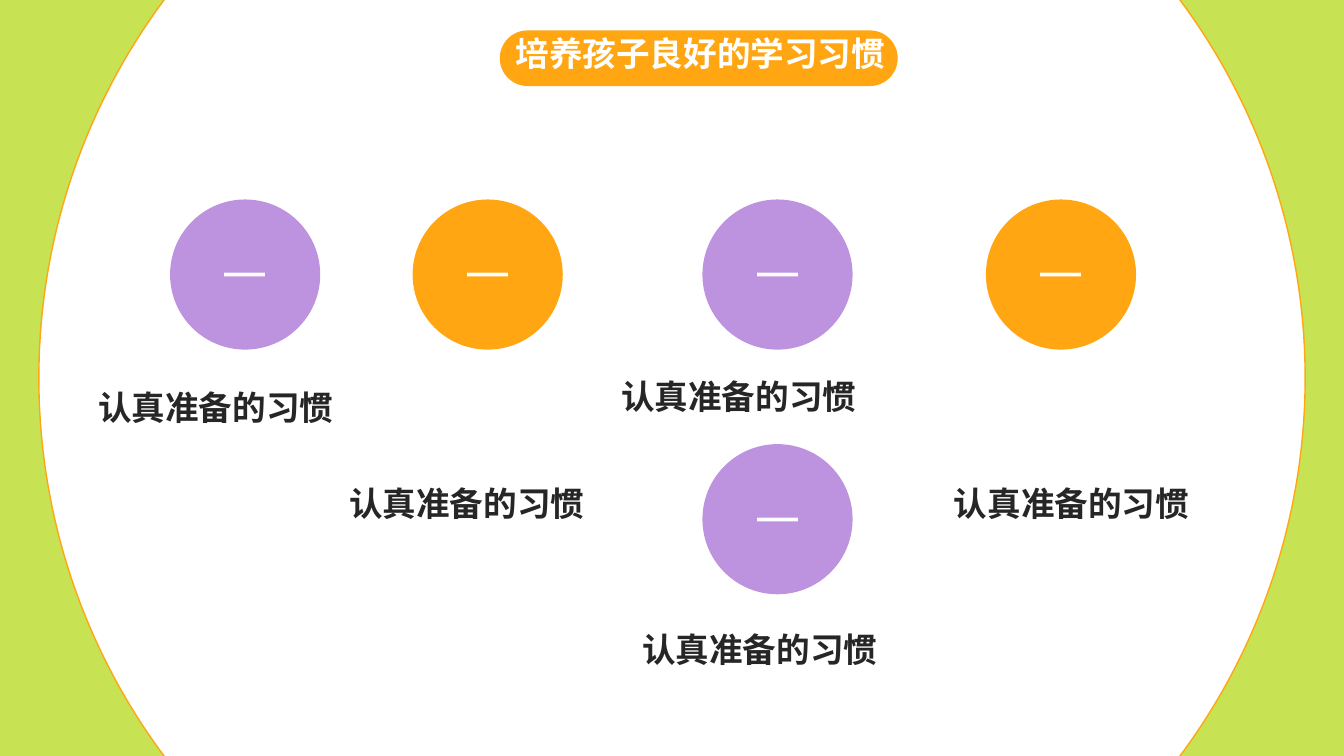
"""Build the slide about good study habits for children."""
from dataclasses import dataclass

from lxml.etree import SubElement
from pptx import Presentation
from pptx.dml.color import RGBColor
from pptx.enum.shapes import MSO_SHAPE
from pptx.enum.text import MSO_ANCHOR, MSO_AUTO_SIZE, PP_ALIGN
from pptx.oxml.ns import qn
from pptx.shapes.autoshape import Shape
from pptx.slide import Slide
from pptx.text.text import TextFrame
from pptx.util import Emu, Pt

EMU_PER_PX = 9525


@dataclass(frozen=True)
class Theme:
    green: str = "C7E252"
    orange: str = "FFA612"
    purple: str = "BD92DF"
    white: str = "FFFFFF"
    ink: str = "262626"
    font: str = "Noto Sans CJK SC"
    number_size: int = 32
    heading_size: int = 24
    outline_width: int = 1


@dataclass(frozen=True)
class Box:
    left: int
    top: int
    width: int
    height: int

    def emu(self) -> tuple[Emu, ...]:
        return tuple(px(n) for n in (self.left, self.top, self.width, self.height))


@dataclass(frozen=True)
class Badge:
    left: int
    top: int
    color: str


@dataclass(frozen=True)
class Label:
    left: int
    top: int


THEME = Theme()
SLIDE = Box(0, 0, 1280, 720)
DISC = Box(37, -243, 1206, 1206)
TITLE_PILL = Box(476, 29, 379, 53)
TITLE_BOX = Box(484, 32, 790, 42)
BADGE_SIZE = 143
LABEL_WIDTH, LABEL_HEIGHT = 317, 48
TITLE = "培养孩子良好的学习习惯"
HABIT = "认真准备的习惯"
NUMBER = "一"
BADGES = (
    Badge(162, 190, THEME.purple),
    Badge(393, 190, THEME.orange),
    Badge(669, 190, THEME.purple),
    Badge(939, 190, THEME.orange),
    Badge(669, 423, THEME.purple),
)
LABELS = (
    Label(84, 364),
    Label(582, 353),
    Label(602, 594),
    Label(899, 455),
    Label(323, 455),
)


def px(count: int) -> Emu:
    return Emu(count * EMU_PER_PX)


def write(frame: TextFrame, text: str, size: int, color: str, bold: bool) -> None:
    frame.text = text
    font = frame.paragraphs[0].runs[0].font
    font.size = Pt(size)
    font.bold = bold
    font.color.rgb = RGBColor.from_string(color)
    font.name = THEME.font
    properties = frame.paragraphs[0].runs[0]._r.get_or_add_rPr()
    SubElement(properties, qn("a:ea")).set("typeface", THEME.font)


def add_filled(slide: Slide, kind: MSO_SHAPE, box: Box, color: str) -> Shape:
    shape = slide.shapes.add_shape(kind, *box.emu())
    shape.shadow.inherit = False
    shape.fill.solid()
    shape.fill.fore_color.rgb = RGBColor.from_string(color)
    shape.line.fill.background()
    return shape


def add_heading(slide: Slide, box: Box, text: str, color: str) -> TextFrame:
    frame = slide.shapes.add_textbox(*box.emu()).text_frame
    frame.word_wrap = True
    frame.auto_size = MSO_AUTO_SIZE.SHAPE_TO_FIT_TEXT
    write(frame, text, THEME.heading_size, color, True)
    return frame


def add_backdrop(slide: Slide) -> None:
    add_filled(slide, MSO_SHAPE.RECTANGLE, SLIDE, THEME.green)
    disc = add_filled(slide, MSO_SHAPE.OVAL, DISC, THEME.white)
    disc.line.color.rgb = RGBColor.from_string(THEME.orange)
    disc.line.width = Pt(THEME.outline_width)


def add_badge(slide: Slide, badge: Badge) -> None:
    box = Box(badge.left, badge.top, BADGE_SIZE, BADGE_SIZE)
    frame = add_filled(slide, MSO_SHAPE.OVAL, box, badge.color).text_frame
    write(frame, NUMBER, THEME.number_size, THEME.white, False)
    frame.vertical_anchor = MSO_ANCHOR.MIDDLE
    frame.paragraphs[0].alignment = PP_ALIGN.CENTER


def add_title(slide: Slide) -> None:
    pill = add_filled(slide, MSO_SHAPE.ROUNDED_RECTANGLE, TITLE_PILL, THEME.orange)
    pill.adjustments[0] = 0.5
    frame = add_heading(slide, TITLE_BOX, TITLE, THEME.white)
    frame.margin_left = frame.margin_right = px(7)
    frame.margin_top = frame.margin_bottom = px(4)
    frame.paragraphs[0].line_spacing = 0.9


def main() -> None:
    presentation = Presentation()
    presentation.slide_width = px(SLIDE.width)
    presentation.slide_height = px(SLIDE.height)
    slide = presentation.slides.add_slide(presentation.slide_layouts[6])
    add_backdrop(slide)
    for badge in BADGES:
        add_badge(slide, badge)
    for label in LABELS:
        box = Box(label.left, label.top, LABEL_WIDTH, LABEL_HEIGHT)
        add_heading(slide, box, HABIT, THEME.ink)
    add_title(slide)
    presentation.save("out.pptx")


if __name__ == "__main__":
    main()
